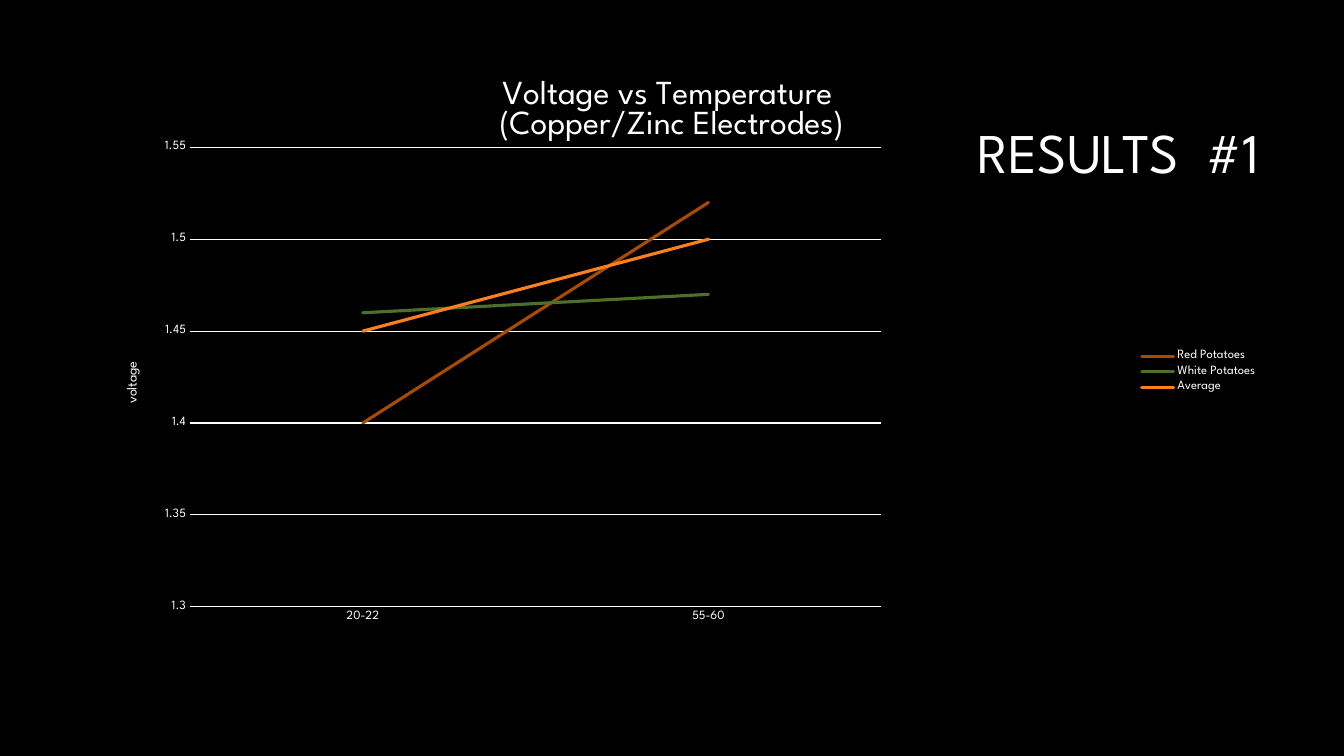
from lxml import etree
from pptx import Presentation
from pptx.chart.data import CategoryChartData
from pptx.dml.color import RGBColor
from pptx.enum.chart import XL_CHART_TYPE, XL_LEGEND_POSITION, XL_MARKER_STYLE, XL_TICK_MARK
from pptx.enum.text import MSO_ANCHOR, PP_ALIGN
from pptx.oxml.ns import qn
from pptx.util import Cm, Pt

LINE_CHART = XL_CHART_TYPE.LINE
LEGEND_RIGHT = XL_LEGEND_POSITION.RIGHT
NO_MARKER = XL_MARKER_STYLE.NONE
NO_TICK = XL_TICK_MARK.NONE
MIDDLE = MSO_ANCHOR.MIDDLE
RIGHT = PP_ALIGN.RIGHT

FONT = "League Spartan"
WHITE = "FFFFFF"
BLACK = "000000"
TEMPERATURES = ["20-22", "55-60"]
VOLTAGES = [
    ("Red Potatoes", [1.4, 1.52], "A74B01"),
    ("White Potatoes", [1.46, 1.47], "4D7028"),
    ("Average", [1.45, 1.5], "FE801A"),
]


def color(hex_value):
    return RGBColor.from_string(hex_value)


def style_font(font, size):
    font.name = FONT
    font.size = Pt(size)
    font.bold = False
    font.color.rgb = color(WHITE)


def style_line(line, hex_value, width):
    line.color.rgb = color(hex_value)
    line.width = Pt(width)


def set_layout(parent, **settings):
    """Place a chart part by fractions of the chart area."""
    layout = parent.find(qn("c:layout"))
    if layout is None:
        layout = etree.Element(qn("c:layout"))
        text = parent.find(qn("c:tx"))
        parent.insert(0 if text is None else 1, layout)
    manual = etree.SubElement(layout, qn("c:manualLayout"))
    for name, value in settings.items():
        etree.SubElement(manual, qn(f"c:{name}")).set("val", str(value))


def write_title(title, lines, size):
    frame = title.text_frame
    frame.text = "\n".join(lines)
    for para in frame.paragraphs:
        para.line_spacing = 0.9
        for span in para.runs:
            style_font(span.font, size)


def add_heading(page, text):
    box = page.shapes.add_textbox(Cm(8.05), Cm(2.13), Cm(23.93), Cm(3.58))
    frame = box.text_frame
    frame.word_wrap = True
    frame.vertical_anchor = MIDDLE
    frame.text = text
    para = frame.paragraphs[0]
    para.alignment = RIGHT
    para.line_spacing = 0.9
    style_font(para.runs[0].font, 40)


def style_axes(chart):
    categories, values = chart.category_axis, chart.value_axis
    for axis in (categories, values):
        axis.major_tick_mark = axis.minor_tick_mark = NO_TICK
        style_font(axis.tick_labels.font, 9)
    style_line(categories.format.line, WHITE, 0.75)
    values.format.line.fill.background()
    values.minimum_scale, values.maximum_scale = 1.3, 1.55
    values.major_unit = 0.05
    style_line(values.major_gridlines.format.line, WHITE, 0.75)
    write_title(values.axis_title, ["voltage"], 10)
    set_layout(values.axis_title._element, xMode="edge", yMode="edge", x=0.04, y=0.48)


def add_voltage_chart(page):
    data = CategoryChartData()
    data.categories = TEMPERATURES
    for name, values, _ in VOLTAGES:
        data.add_series(name, values)
    chart = page.shapes.add_chart(
        LINE_CHART, Cm(1.9), Cm(1.47), Cm(30.05), Cm(15.8), data
    ).chart
    style_font(chart.font, 10)
    write_title(chart.chart_title, ["Voltage vs Temperature ", "(Copper/Zinc Electrodes)"], 24)
    chart.has_legend = True
    chart.legend.position = LEGEND_RIGHT
    chart.legend.include_in_layout = False
    style_font(chart.legend.font, 9)
    style_axes(chart)

    plot = chart.plots[0]
    plot.vary_by_categories = False
    for series, (_, _, hex_value) in zip(plot.series, VOLTAGES):
        series.smooth = False
        series.marker.style = NO_MARKER
        style_line(series.format.line, hex_value, 2.25)
        series._element.find(f"{qn('c:spPr')}/{qn('a:ln')}").set("cap", "rnd")

    plot_area = chart._chartSpace.find(f"{qn('c:chart')}/{qn('c:plotArea')}")
    set_layout(plot_area, layoutTarget="inner", xMode="edge", yMode="edge",
               x=0.096, y=0.142, w=0.58, h=0.733)


def main():
    deck = Presentation()
    deck.slide_width, deck.slide_height = Cm(33.87), Cm(19.05)
    page = deck.slides.add_slide(deck.slide_layouts[6])
    page.background.fill.solid()
    page.background.fill.fore_color.rgb = color(BLACK)
    add_heading(page, "RESULTS  #1")
    add_voltage_chart(page)
    deck.save("out.pptx")


if __name__ == "__main__":
    main()
